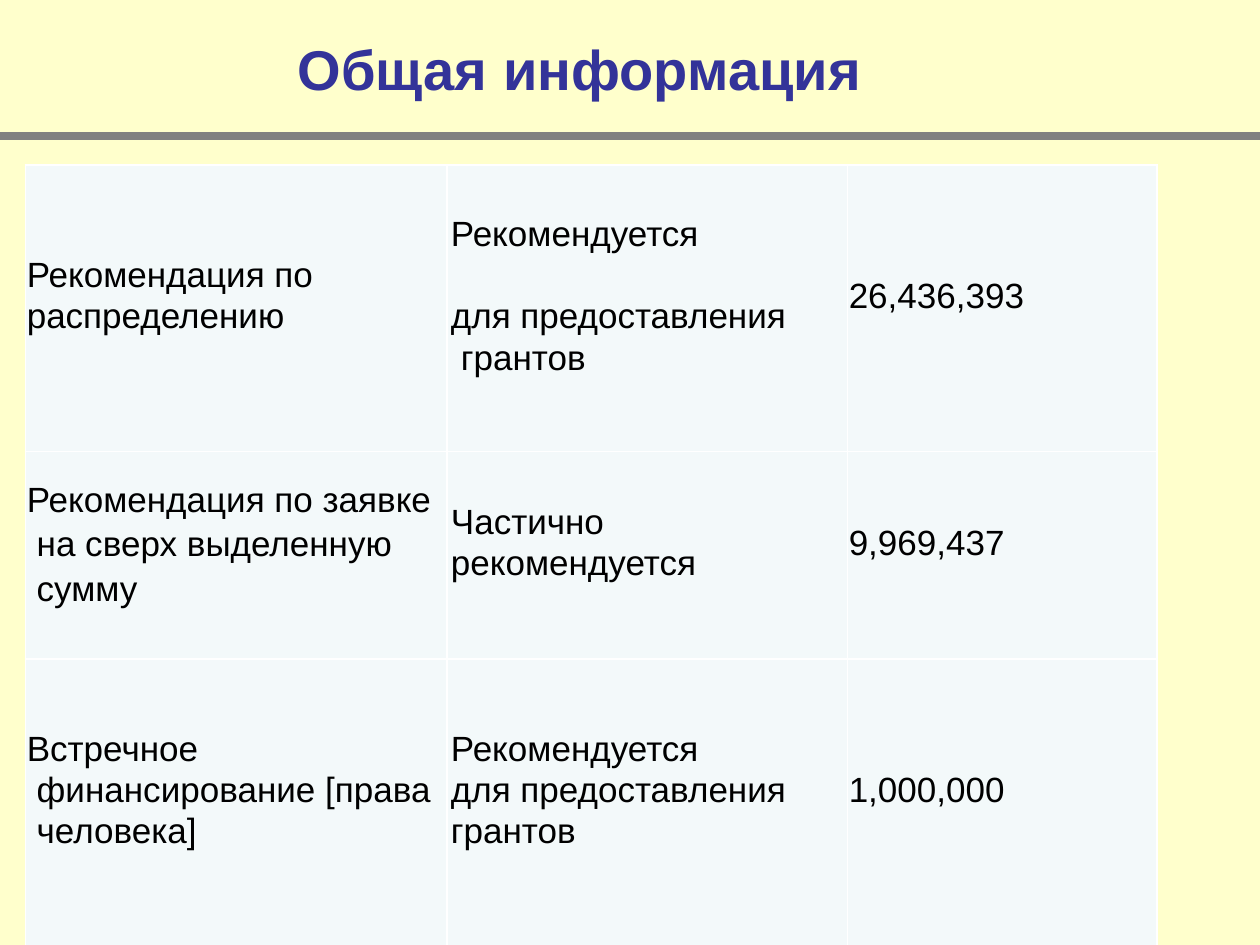
from lxml.etree import SubElement
from pptx import Presentation
from pptx.dml.color import RGBColor
from pptx.enum.shapes import MSO_CONNECTOR
from pptx.enum.text import MSO_ANCHOR, PP_ALIGN
from pptx.oxml.ns import qn
from pptx.util import Cm, Pt

COLS = [8.5, 8.07, 6.24]
ROWS = [5.77, 4.19, 5.77]
LEFTS = [0, 0.05, 0]
SHIFT = {"shift": 0.2}
CELLS = [
    [
        [("Рекомендация по", {}), ("распределению", {})],
        [("Рекомендуется", {}), ("для предоставления", {"before": 38.5}),
         ("грантов", SHIFT)],
        [("26,436,393", {})],
    ],
    [
        [("Рекомендация по заявке", {"line": 10.3}),
         ("на сверх выделенную", {"line": 10.3, **SHIFT}),
         ("сумму", {"line": 10.3, **SHIFT})],
        [("Частично", {}), ("рекомендуется", {})],
        [("9,969,437", {})],
    ],
    [
        [("Встречное", {}), ("финансирование [права", SHIFT),
         ("человека]", SHIFT)],
        [("Рекомендуется", {}), ("для предоставления", {}), ("грантов", {})],
        [("1,000,000", {})],
    ],
]


def rgb(value):
    """Return the colour for a hex string."""
    return RGBColor.from_string(value)


def write(p, text, size=20, color="000000", bold=False, align=PP_ALIGN.LEFT,
          left=0, before=0, line=None):
    """Fill a paragraph with text in the given format."""
    pPr = p._p.get_or_add_pPr()
    pPr.set("marL", str(Cm(left)))
    pPr.set("indent", "0")
    p.alignment = align
    p.space_before = Pt(before)
    if line:
        p.line_spacing = Pt(line)
    r = p.add_run()
    r.text = text
    r.font.name = "Arial"
    r.font.size = Pt(size)
    r.font.bold = bold
    r.font.color.rgb = rgb(color)


def add_borders(cell, color="FFFFFF", width=1):
    """Draw the four borders of a table cell."""
    tcPr = cell._tc.get_or_add_tcPr()
    for side in ("a:lnL", "a:lnR", "a:lnT", "a:lnB"):
        ln = SubElement(tcPr, qn(side), w=str(Pt(width)))
        fill = SubElement(ln, qn("a:solidFill"))
        SubElement(fill, qn("a:srgbClr"), val=color)


def fill_cell(cell, lines, left):
    """Format a table cell and write its lines."""
    add_borders(cell)
    cell.fill.solid()
    cell.fill.fore_color.rgb = rgb("F3F9FA")
    cell.vertical_anchor = MSO_ANCHOR.MIDDLE
    cell.margin_left = cell.margin_right = Cm(0.03)
    cell.margin_top = cell.margin_bottom = 0
    tf = cell.text_frame
    for i, (text, fmt) in enumerate(lines):
        p = tf.add_paragraph() if i else tf.paragraphs[0]
        write(p, text, left=left + fmt.get("shift", 0),
              before=fmt.get("before", 15) if i else 0,
              line=fmt.get("line", 8.5))


def add_header(slide, x, y, w, h):
    """Place the title and the rule along the bottom of the header box."""
    sp = slide.shapes.title
    sp.left, sp.top, sp.width, sp.height = (
        Cm(x + 0.89), Cm(y + 0.53), Cm(21.59), Cm(1.7))
    tf = sp.text_frame
    tf.vertical_anchor = MSO_ANCHOR.MIDDLE
    write(tf.paragraphs[0], "Общая информация", size=32, color="333399",
          bold=True, align=PP_ALIGN.CENTER)
    rule = slide.shapes.add_connector(
        MSO_CONNECTOR.STRAIGHT, Cm(x), Cm(y + h), Cm(x + w), Cm(y + h))
    rule.line.color.rgb = rgb("808080")
    rule.line.width = Pt(4.5)
    SubElement(rule._element.spPr, qn("a:effectLst"))


def add_funding_table(slide, x, y):
    """Place the funding table with its top left corner at x, y."""
    table = slide.shapes.add_table(
        len(ROWS), len(COLS), Cm(x), Cm(y), Cm(sum(COLS)), Cm(sum(ROWS))).table
    table.first_row = table.horz_banding = False
    for column, width in zip(table.columns, COLS):
        column.width = Cm(width)
    for i, height in enumerate(ROWS):
        table.rows[i].height = Cm(height)
        for j, left in enumerate(LEFTS):
            fill_cell(table.cell(i, j), CELLS[i][j], left)


def main():
    """Build and save the slide."""
    prs = Presentation()
    prs.slide_width, prs.slide_height = Cm(25.4), Cm(19.05)
    slide = prs.slides.add_slide(prs.slide_layouts[5])
    slide.background.fill.solid()
    slide.background.fill.fore_color.rgb = rgb("FFFFCC")
    add_header(slide, 0, 0, 25.4, 2.74)
    add_funding_table(slide, 0.51, 3.33)
    prs.save("out.pptx")


if __name__ == "__main__":
    main()
